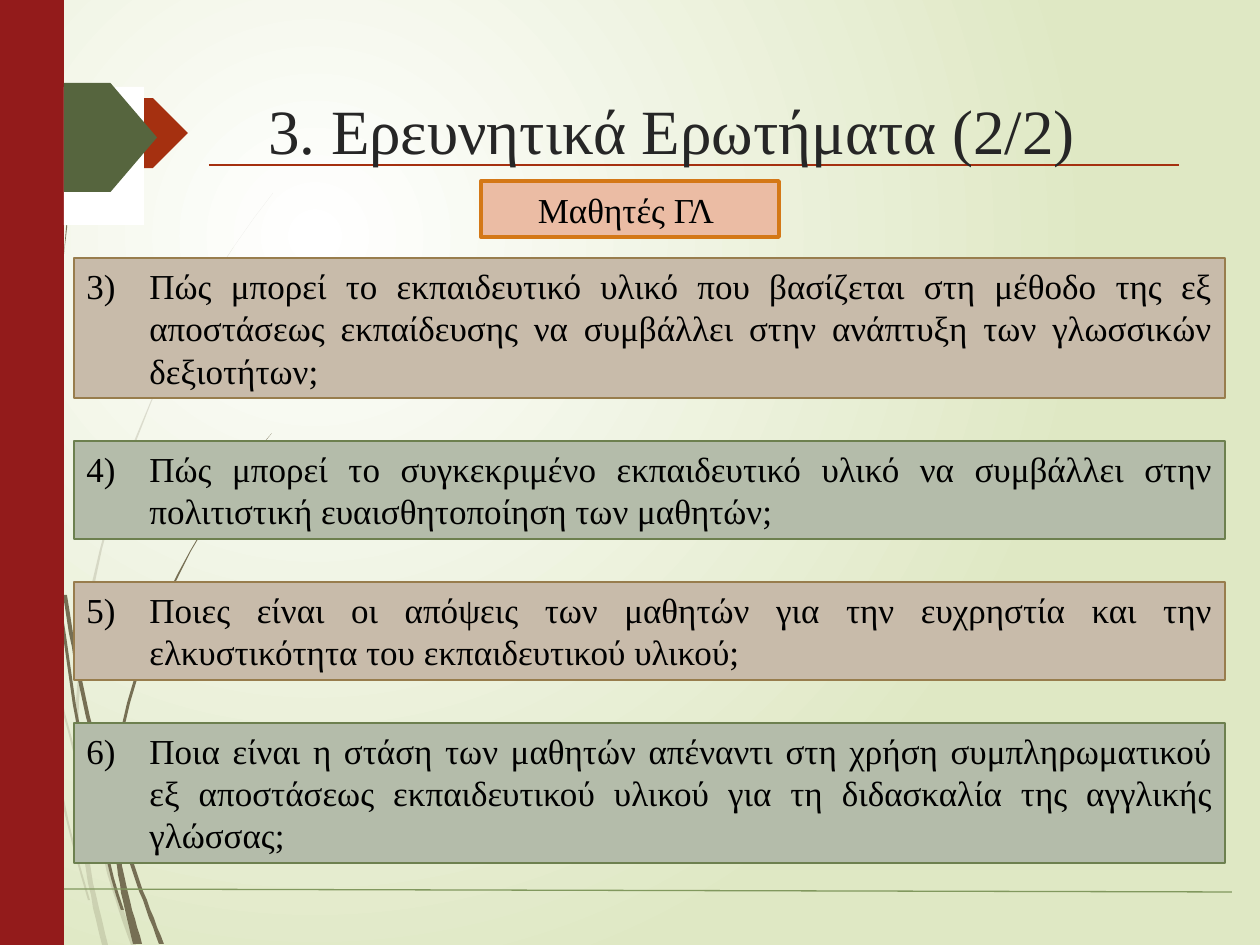
from lxml import etree
from pptx import Presentation
from pptx.dml.color import RGBColor
from pptx.enum.shapes import MSO_CONNECTOR, MSO_SHAPE
from pptx.enum.text import MSO_ANCHOR, PP_ALIGN
from pptx.oxml.ns import qn
from pptx.util import Pt

PX = 914400 // 126
SLIDE_W, SLIDE_H = 1260, 945
RECT, PENTAGON = MSO_SHAPE.RECTANGLE, MSO_SHAPE.PENTAGON
STRAIGHT = MSO_CONNECTOR.STRAIGHT
TOP, MIDDLE = MSO_ANCHOR.TOP, MSO_ANCHOR.MIDDLE
CENTER, JUSTIFY = PP_ALIGN.CENTER, PP_ALIGN.JUSTIFY

COLORS = {
    "white": "FFFFFF", "lime": "DFE8C4", "wisp": "766F54", "bar": "931B1B",
    "rust": "A53010", "olive": "56653E", "rule": "81985E", "title": "262626",
    "text": "000000", "tan": "C8BBAA", "tan_line": "987D4D", "sage": "B4BCAA",
    "sage_line": "6D804F", "peach": "EBBCA4", "orange": "D47817",
}
RGB = {name: RGBColor.from_string(value) for name, value in COLORS.items()}

# Each grass blade: Bézier start, two handles, end; width at start and at end
PALE, SOLID = 20, 100  # opacity in percent
CURVE_STEPS = 16
BLADES = {
    PALE: {
        "tall arc": ((273, 193), (170, 320), (75, 540), (75, 738), 0, 3),
        "outer stem": ((1, 355), (12, 480), (45, 650), (74, 755), 6, 2),
        "inner stem": ((9, 441), (14, 560), (50, 780), (88, 900), 4, 2),
        "right root": ((77, 755), (87, 800), (110, 890), (131, 945), 2, 5),
        "left root": ((75, 740), (76, 810), (85, 880), (102, 945), 2, 6),
    },
    SOLID: {
        "tall arc": ((272, 433), (200, 515), (113, 670), (112, 808), 0, 4),
        "outer stem": ((3, 0), (5, 200), (30, 430), (57, 606), 1, 3),
        "upright": ((72, 178), (56, 310), (50, 460), (62, 595), 0, 2),
        "middle stem": ((63, 595), (72, 660), (92, 745), (110, 813), 4, 4),
        "inner stem": ((59, 601), (70, 710), (95, 830), (121, 910), 3, 3),
        "right root": ((115, 808), (122, 845), (142, 900), (159, 944), 2, 5),
        "left root": ((112, 805), (111, 850), (122, 900), (133, 944), 3, 9),
    },
}

LINE_H, BOX_PADDING, BOX_GAP = 42, 14, 43
FIRST_BOX_TOP, FIRST_NUMBER, HANGING = 258, 3, 63
# Lines the text fills, text
QUESTIONS = [
    (3, "Πώς μπορεί το εκπαιδευτικό υλικό που βασίζεται στη μέθοδο της εξ αποστάσεως "
        "εκπαίδευσης να συμβάλλει στην ανάπτυξη των γλωσσικών δεξιοτήτων;"),
    (2, "Πώς μπορεί το συγκεκριμένο εκπαιδευτικό υλικό να συμβάλλει στην πολιτιστική "
        "ευαισθητοποίηση των μαθητών;"),
    (2, "Ποιες είναι οι απόψεις των μαθητών για την ευχρηστία και την ελκυστικότητα "
        "του εκπαιδευτικού υλικού; "),
    (3, "Ποια είναι η στάση των μαθητών απέναντι στη χρήση συμπληρωματικού εξ "
        "αποστάσεως εκπαιδευτικού υλικού για τη διδασκαλία της αγγλικής γλώσσας; "),
]


def paint(sp, fill, line=None, width=0):
    sp.shadow.inherit = False
    sp.fill.solid()
    sp.fill.fore_color.rgb = RGB[fill]
    if line:
        sp.line.color.rgb = RGB[line]
        sp.line.width = Pt(width)
    else:
        sp.line.fill.background()


def write(sp, text, size, color, align, anchor):
    """Put one Times New Roman paragraph in the shape and return it."""
    tf = sp.text_frame
    tf.word_wrap = True
    tf.vertical_anchor = anchor
    p = tf.paragraphs[0]
    p.alignment = align
    r = p.add_run()
    r.text = text
    for key, value in {"name": "Times New Roman", "size": Pt(size), "bold": False}.items():
        setattr(r.font, key, value)
    r.font.color.rgb = RGB[color]
    return p


prs = Presentation()
prs.slide_width, prs.slide_height = SLIDE_W * PX, SLIDE_H * PX
s = prs.slides.add_slide(prs.slide_layouts[5])

# Background: circular gradient, white at the upper left
bg = s.background.fill
bg.gradient()
for stop, (position, color) in zip(bg.gradient_stops, [(0, "white"), (1, "lime")]):
    stop.position = position
    stop.color.rgb = RGB[color]
grad = next(s.background._cSld.iter(qn("a:gradFill")))
for lin in grad.findall(qn("a:lin")):
    grad.remove(lin)
circle = etree.SubElement(grad, qn("a:path"), path="circle")
etree.SubElement(circle, qn("a:fillToRect"), l="50000", t="50000", r="100000", b="100000")

# Grass blades: down the left edge of the curve, back up the right edge
for opacity, blades in BLADES.items():
    for *controls, start_width, end_width in blades.values():
        left, right = [], []
        for step in range(CURVE_STEPS + 1):
            t = step / CURVE_STEPS
            weights = [(1 - t) ** 3, 3 * t * (1 - t) ** 2, 3 * t * t * (1 - t), t ** 3]
            x, y = [sum(w * c for w, c in zip(weights, axis)) for axis in zip(*controls)]
            left.append((x, y))
            right.append((x + start_width + (end_width - start_width) * t, y))
        fb = s.shapes.build_freeform(*left[0], scale=PX)
        fb.add_line_segments(left[1:] + right[::-1], close=True)
        blade = fb.convert_to_shape()
        paint(blade, "wisp")
        clr = next(blade._element.spPr.iter(qn("a:srgbClr")))
        etree.SubElement(clr, qn("a:alpha"), val=str(opacity * 1000))

# Side bar and arrow marker
for kind, box, color in [
    (PENTAGON, (0, 98, 188, 70), "rust"),
    (RECT, (0, 0, 64, SLIDE_H), "bar"),
    (RECT, (64, 87, 80, 138), "white"),
    (PENTAGON, (64, 83, 93, 109), "olive"),
]:
    paint(s.shapes.add_shape(kind, *[v * PX for v in box]), color)

# Rules under the title and at the foot
for ends, color in [((209, 165, 1179, 165), "rust"), ((64, 889, 1232, 892), "rule")]:
    rule = s.shapes.add_connector(STRAIGHT, *[v * PX for v in ends])
    rule.line.color.rgb = RGB[color]
    rule.line.width = Pt(0.75)
    etree.SubElement(rule._element.spPr, qn("a:effectLst"))

# Title, in front of the decoration
title = s.shapes.title
s.shapes._spTree.append(title._element)
for key, value in {"left": 144, "top": 86, "width": 1071, "height": 79}.items():
    setattr(title, key, value * PX)
title.text_frame.margin_top = 5 * PX
write(title, "3. Ερευνητικά Ερωτήματα (2/2) ", 36, "title", CENTER, TOP)

label = s.shapes.add_shape(RECT, 481 * PX, 181 * PX, 298 * PX, 56 * PX)
paint(label, "peach", "orange", 2.25)
write(label, "Μαθητές ΓΛ ", 20, "text", CENTER, MIDDLE)

# Numbered questions, stacked with equal gaps in alternating colours
top = FIRST_BOX_TOP
for i, (lines, text) in enumerate(QUESTIONS):
    color = ("tan", "sage")[i % 2]
    height = lines * LINE_H + BOX_PADDING
    box = s.shapes.add_shape(RECT, 74 * PX, top * PX, 1151 * PX, height * PX)
    paint(box, color, color + "_line", 1.5)
    pPr = write(box, text, 20, "text", JUSTIFY, MIDDLE)._p.get_or_add_pPr()
    pPr.set("marL", str(HANGING * PX))
    pPr.set("indent", str(-HANGING * PX))
    etree.SubElement(pPr, qn("a:buAutoNum"), type="arabicParenR",
                     startAt=str(FIRST_NUMBER + i))
    top += height + BOX_GAP

prs.save("out.pptx")
